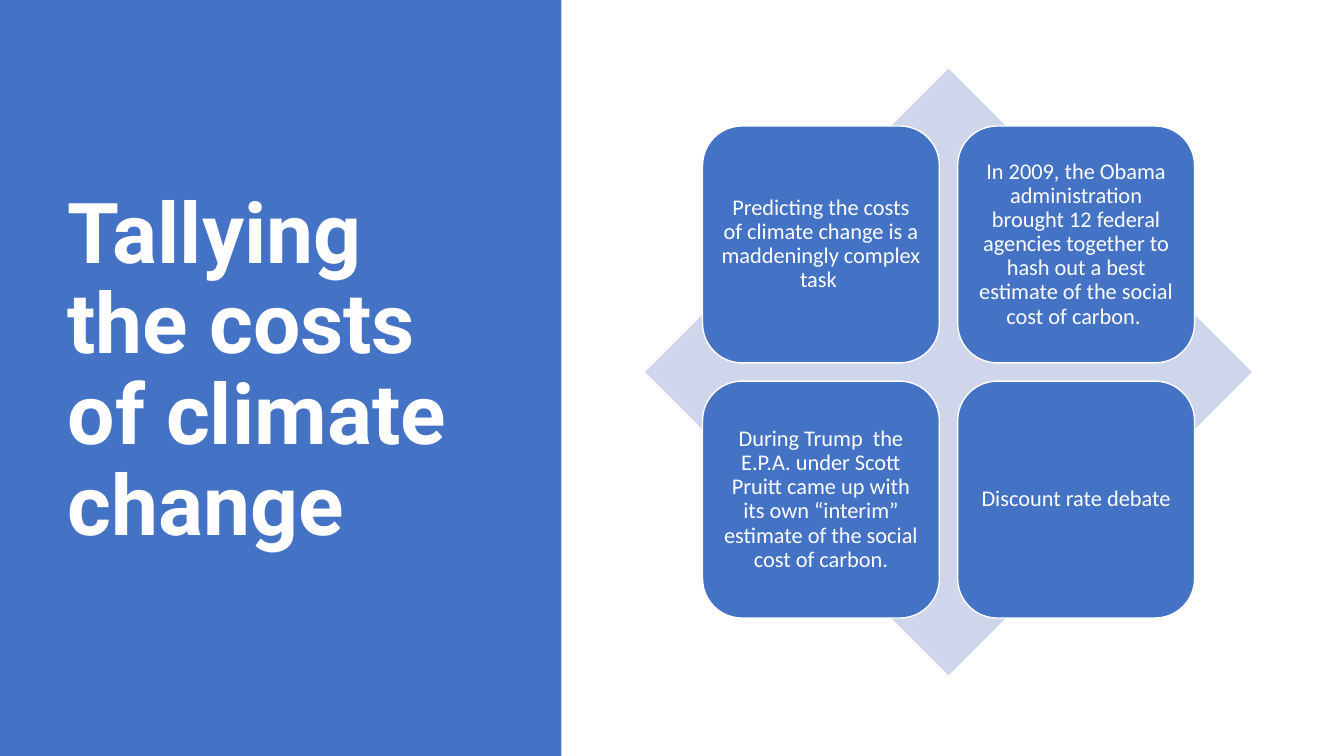
from dataclasses import dataclass

from pptx import Presentation
from pptx.dml.color import RGBColor as RGB
from pptx.enum.shapes import MSO_SHAPE as SHAPE
from pptx.enum.text import MSO_ANCHOR as ANCHOR, MSO_AUTO_SIZE as AUTO, PP_ALIGN as ALIGN
from pptx.util import Cm, Pt


@dataclass(frozen=True)
class Theme:
    blue: RGB = RGB(0x44, 0x72, 0xC4)
    pale: RGB = RGB(0xCF, 0xD5, 0xEA)
    white: RGB = RGB(0xFF, 0xFF, 0xFF)
    title_font: str = "Roboto"
    body_font: str = "Calibri"
    title_size: Pt = Pt(60)
    body_size: Pt = Pt(16)


T = Theme()


def add_plain_shape(shapes, kind, left, top, width, height, fill):
    """Add a shape, measured in cm, with a solid fill and no line or shadow."""
    sp = shapes.add_shape(kind, Cm(left), Cm(top), Cm(width), Cm(height))
    sp.shadow.inherit = False
    sp.fill.solid()
    sp.fill.fore_color.rgb = fill
    sp.line.fill.background()
    return sp


def set_text(sp, text, font, size, align, bold=False):
    """Write one white paragraph, centred vertically."""
    tf = sp.text_frame
    tf.text = text
    tf.word_wrap = True
    tf.auto_size = AUTO.NONE
    tf.vertical_anchor = ANCHOR.MIDDLE
    p = tf.paragraphs[0]
    p.alignment = align
    p.line_spacing = 0.9
    f = p.runs[0].font
    f.name, f.size, f.bold = font, size, bold
    f.color.rgb = T.white


prs = Presentation()
prs.slide_width, prs.slide_height = Cm(33.87), Cm(19.05)
s = prs.slides.add_slide(prs.slide_layouts[5])

# Title on the blue side panel
panel = add_plain_shape(s.shapes, SHAPE.RECTANGLE, 0, 0, 14.15, 19.05, T.blue)
title = s.shapes.title
panel.element.addnext(title.element)
title.left, title.top, title.width, title.height = Cm(1.45), Cm(1.73), Cm(10.57), Cm(15.29)
set_text(title, "Tallying the costs of climate change", T.title_font, T.title_size,
         ALIGN.LEFT, bold=True)

# Diamond with a two-by-two grid of tiles centred on it
LEFT, TOP, SIDE = 16.26, 1.73, 15.29
TILE, GAP = 5.97, 0.46
MARGIN = (SIDE - 2 * TILE - GAP) / 2
TILE_TEXTS = [
    "Predicting the costs of climate change is a maddeningly complex task ",
    "In 2009, the Obama administration brought 12 federal agencies together "
    "to hash out a best estimate of the social cost of carbon. ",
    "During Trump  the E.P.A. under Scott Pruitt came up with its own “interim” "
    "estimate of the social cost of carbon.",
    "Discount rate debate",
]

matrix = s.shapes.add_group_shape()
add_plain_shape(matrix.shapes, SHAPE.DIAMOND, LEFT, TOP, SIDE, SIDE, T.pale)
for i, text in enumerate(TILE_TEXTS):
    row, col = divmod(i, 2)
    tile = add_plain_shape(matrix.shapes, SHAPE.ROUNDED_RECTANGLE,
                           LEFT + MARGIN + col * (TILE + GAP),
                           TOP + MARGIN + row * (TILE + GAP), TILE, TILE, T.blue)
    tile.line.color.rgb = T.white
    tile.line.width = Pt(1)
    tf = tile.text_frame
    tf.margin_left = tf.margin_right = tf.margin_top = tf.margin_bottom = Cm(0.17)
    set_text(tile, text, T.body_font, T.body_size, ALIGN.CENTER)

prs.save("out.pptx")
